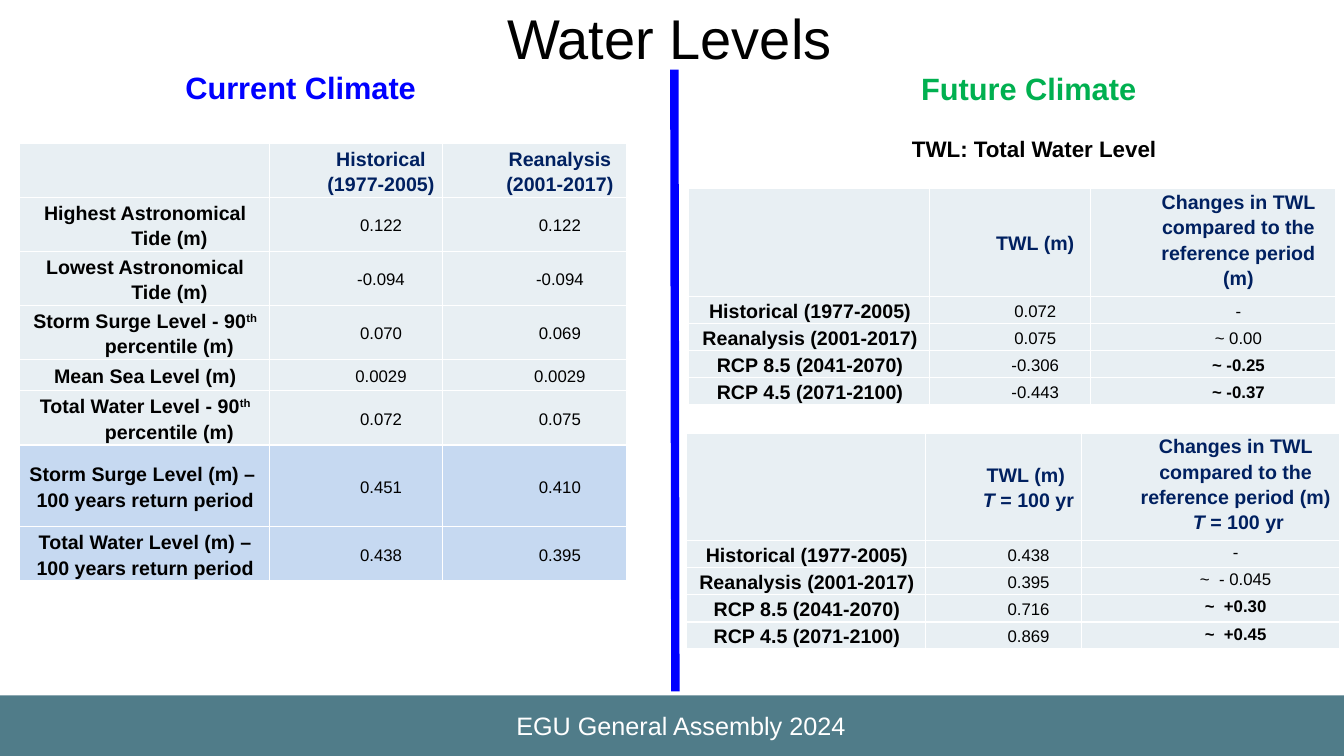
"""Build the Water Levels slide with current and future climate tables."""
import pptx
import pptx.dml.color
import pptx.enum.shapes
import pptx.enum.text
import pptx.oxml
import pptx.oxml.ns
import pptx.util

Pt = pptx.util.Pt
RGBColor = pptx.dml.color.RGBColor
Anchor = pptx.enum.text.MSO_ANCHOR
Align = pptx.enum.text.PP_ALIGN

BLACK = RGBColor(0x00, 0x00, 0x00)
WHITE = RGBColor(0xFF, 0xFF, 0xFF)
NAVY = RGBColor(0x00, 0x20, 0x60)
BLUE = RGBColor(0x00, 0x00, 0xFF)
GREEN = RGBColor(0x00, 0xB0, 0x50)
TEAL = RGBColor(0x50, 0x7C, 0x89)
PALE = RGBColor(0xE8, 0xEF, 0xF3)
SKY = RGBColor(0xC6, 0xD9, 0xF1)

FONT = "Arial"
PAGE_WIDTH, PAGE_HEIGHT = 960, 540
BAND = (-0.5, 496.8, 960.5, 43.2)
DIVIDER = (482.4, 493.9, 481.7, 49.7)

LABELS = [
    ("Water Levels", (22.3, -2.2, 911.5, 56.9), 40, BLACK, False, Align.CENTER, Anchor.MIDDLE),
    ("EGU General Assembly 2024", (186.5, 504, 599.8, 28.8), 18, WHITE, False, Align.CENTER, Anchor.TOP),
    ("Current Climate", (125.3, 45.4, 190.8, 33.8), 22, BLUE, True, Align.LEFT, Anchor.TOP),
    ("Future Climate", (650.9, 46.1, 176.4, 33.8), 22, GREEN, True, Align.LEFT, Anchor.TOP),
    ("TWL: Total Water Level", (627.8, 92.9, 221.8, 26.6), 16, BLACK, True, Align.CENTER, Anchor.TOP),
]

TABLES = [
    {
        "at": (13.7, 102.4),
        "columns": (178.6, 123.8, 131.8),
        "heights": (38.6, 38.6, 38.6, 38.6, 22.3, 38.6, 58.5, 38.2),
        "top_cells": (),
        "rows": [
            ("", "Historical (1977-2005)", "Reanalysis (2001-2017)"),
            ("Highest Astronomical Tide (m)", "0.122", "0.122"),
            ("Lowest Astronomical Tide (m)", "-0.094", "-0.094"),
            ("Storm Surge Level - 90|th| percentile (m)", "0.070", "0.069"),
            ("Mean Sea Level (m)", "0.0029", "0.0029"),
            ("Total Water Level - 90|th| percentile (m)", "0.072", "0.075"),
            ("Storm Surge Level (m) – \n100 years return period", "0.451", "0.410"),
            ("Total Water Level (m) –\n100 years return period", "0.438", "0.395"),
        ],
    },
    {
        "at": (491.8, 134.6),
        "columns": (172.1, 115.2, 175),
        "heights": (76.9,) + (19.3,) * 4,
        "top_cells": ((0, 2),),
        "rows": [
            ("", "TWL (m)", "Changes in TWL compared to the reference period (m)"),
            ("Historical (1977-2005)", "0.072", "-"),
            ("Reanalysis (2001-2017)", "0.075", "~ 0.00"),
            ("RCP 8.5 (2041-2070)", "-0.306", "~ -0.25"),
            ("RCP 4.5 (2071-2100)", "-0.443", "~ -0.37"),
        ],
    },
    {
        "at": (490.3, 309),
        "columns": (170.6, 111.6, 184.3),
        "heights": (76.7,) + (19.3,) * 4,
        "top_cells": tuple((row, 2) for row in range(5)),
        "rows": [
            ("", "TWL (m)  |T| = 100 yr",
             "Changes in TWL compared to the reference period (m)  |T| = 100 yr"),
            ("Historical (1977-2005)", "0.438", "-"),
            ("Reanalysis (2001-2017)", "0.395", "~  - 0.045"),
            ("RCP 8.5 (2041-2070)", "0.716", "~  +0.30"),
            ("RCP 4.5 (2071-2100)", "0.869", "~  +0.45"),
        ],
    },
]


def style(span, size, color, bold):
    span.font.name = FONT
    span.font.size = Pt(size)
    span.font.color.rgb = color
    span.font.bold = bold


def add_label(page, text, place, size, color, bold, align, anchor):
    box = page.shapes.add_textbox(*map(Pt, place))
    frame = box.text_frame
    frame.word_wrap = True
    frame.vertical_anchor = anchor
    frame.text = text
    para = frame.paragraphs[0]
    para.alignment = align
    style(para.runs[0], size, color, bold)


def set_borders(cell, widths):
    properties = cell._tc.get_or_add_tcPr()
    for index, (side, width) in enumerate(zip("LRTB", widths)):
        border = pptx.oxml.parse_xml(
            f'<a:ln{side} {pptx.oxml.ns.nsdecls("a")} w="{Pt(width)}"><a:solidFill>'
            f'<a:srgbClr val="{WHITE}"/></a:solidFill></a:ln{side}>')
        properties.insert(index, border)


def write_cell(cell, text, size, color, bold, hanging):
    cell.text_frame.text = text.replace("|", "")
    for para, line in zip(cell.text_frame.paragraphs, text.split("\n")):
        para.alignment = Align.CENTER
        para.line_spacing = 1.15
        indents = para._p.get_or_add_pPr()
        indents.set("marL", str(Pt(36)))
        indents.set("indent", str(Pt(-34.5 if hanging else 0)))
        para.clear()
        for piece in line.split("|"):
            span = para.add_run()
            span.text = piece
            style(span, size, color, bold)
            if piece == "T":
                span.font.italic = True
            if piece == "th":
                span._r.get_or_add_rPr().set("baseline", "30000")


def add_levels(page, content):
    rows, columns, heights = content["rows"], content["columns"], content["heights"]
    place = (*content["at"], sum(columns), sum(heights))
    table = page.shapes.add_table(len(rows), len(columns), *map(Pt, place)).table
    table.first_row = table.horz_banding = False
    for column, width in zip(table.columns, columns):
        column.width = Pt(width)
    last_row, last_column = len(rows) - 1, len(columns) - 1
    for row, texts in enumerate(rows):
        table.rows[row].height = Pt(heights[row])
        for column, text in enumerate(texts):
            cell = table.cell(row, column)
            cell.fill.solid()
            cell.fill.fore_color.rgb = SKY if "return period" in texts[0] else PALE
            outer = (column == 0, column == last_column, row == 0, row == last_row)
            set_borders(cell, [1.5 if edge else 1 for edge in outer])
            cell.margin_left = cell.margin_right = Pt(5)
            cell.margin_top = cell.margin_bottom = Pt(0)
            at_top = (row, column) in content["top_cells"]
            cell.vertical_anchor = Anchor.TOP if at_top else Anchor.MIDDLE
            heading = row == 0 or column == 0
            bold = heading or (column == last_column and texts[0].startswith("RCP"))
            if text:
                write_cell(cell, text, 14 if heading else 12,
                           NAVY if row == 0 else BLACK, bold, column == 0)


def main():
    deck = pptx.Presentation()
    deck.slide_width, deck.slide_height = Pt(PAGE_WIDTH), Pt(PAGE_HEIGHT)
    page = deck.slides.add_slide(deck.slide_layouts[6])

    band = page.shapes.add_shape(pptx.enum.shapes.MSO_SHAPE.RECTANGLE, *map(Pt, BAND))
    band.shadow.inherit = False
    band.fill.solid()
    band.fill.fore_color.rgb = TEAL
    band.line.fill.background()

    divider = page.shapes.add_connector(
        pptx.enum.shapes.MSO_CONNECTOR.STRAIGHT, *map(Pt, DIVIDER))
    divider.line.color.rgb = BLUE
    divider.line.width = Pt(6)
    divider._element.spPr.append(
        pptx.oxml.parse_xml(f'<a:effectLst {pptx.oxml.ns.nsdecls("a")}/>'))

    for label in LABELS:
        add_label(page, *label)
    for content in TABLES:
        add_levels(page, content)
    deck.save("out.pptx")


if __name__ == "__main__":
    main()
